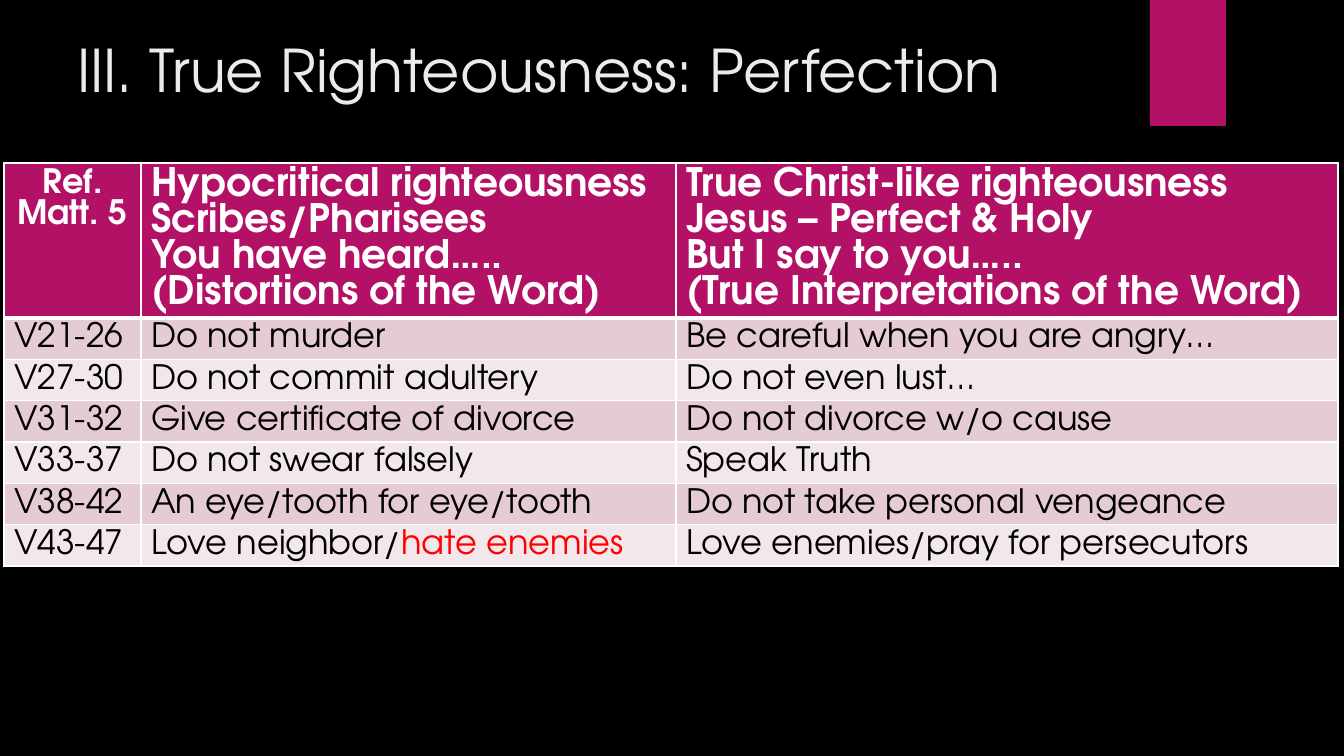
from lxml import etree
from pptx import Presentation
from pptx.dml.color import RGBColor
from pptx.enum.shapes import MSO_SHAPE
from pptx.enum.text import MSO_ANCHOR, PP_ALIGN
from pptx.oxml.ns import qn
from pptx.util import Emu, Pt

RECT = MSO_SHAPE.RECTANGLE
TOP = MSO_ANCHOR.TOP
LEFT, CENTER = PP_ALIGN.LEFT, PP_ALIGN.CENTER

BLACK = RGBColor(0x00, 0x00, 0x00)
WHITE = RGBColor(0xFF, 0xFF, 0xFF)
TITLE_GRAY = RGBColor(0xEB, 0xEB, 0xEB)
MAGENTA = RGBColor(0xB3, 0x11, 0x66)
BANDS = RGBColor(0xE5, 0xCC, 0xD3), RGBColor(0xF2, 0xE7, 0xEA)
RED = RGBColor(0xFF, 0x00, 0x00)

FONT = "TeX Gyre Adventor"
PX = 914400 / 100.8
COLUMNS = 137, 535, 662
HEADER_HEIGHT, ROW_HEIGHT = 155, 41
LINE_PITCH = {24: 22.3, 28: 25.7}

HEADERS = [
    (["Ref.", "Matt. 5"], 24, CENTER),
    (["Hypocritical righteousness", "Scribes/Pharisees",
      "You have heard…..", "(Distortions of the Word)"], 28, LEFT),
    (["True Christ-like righteousness", "Jesus – Perfect & Holy",
      "But I say to you…..", "(True Interpretations of the Word)"], 28, LEFT),
]
VERSES = [
    ("V21-26", "Do not murder", "Be careful when you are angry…"),
    ("V27-30", "Do not commit adultery", "Do not even lust…"),
    ("V31-32", "Give certificate of divorce", "Do not divorce w/o cause"),
    ("V33-37", "Do not swear falsely", "Speak Truth"),
    ("V38-42", "An eye/tooth for eye/tooth", "Do not take personal vengeance"),
    ("V43-47", "Love neighbor/", "Love enemies/pray for persecutors"),
]


def px(n):
    """Turn whole pixels into EMU."""
    return Emu(round(n * PX))


def set_font(font, size, color, bold=False):
    """Format a paragraph font."""
    font.name, font.size, font.bold = FONT, Pt(size), bold
    font.color.rgb = color


def add_title(s, text):
    """Place and fill the title placeholder."""
    sp = s.shapes.title
    sp.left, sp.top, sp.width, sp.height = px(67), px(29), px(1037), px(154)
    tf = sp.text_frame
    tf.text, tf.vertical_anchor, tf.word_wrap = text, TOP, True
    p = tf.paragraphs[0]
    p.alignment = LEFT
    set_font(p.font, 42, TITLE_GRAY)


def add_bar(s, x, y, w, h):
    """Add the magenta accent bar."""
    sp = s.shapes.add_shape(RECT, px(x), px(y), px(w), px(h))
    sp.shadow.inherit = False
    sp.fill.solid()
    sp.fill.fore_color.rgb = MAGENTA
    sp.line.fill.background()


def set_borders(cell, bottom):
    """Draw white borders round a cell, with its own bottom width."""
    tcPr = cell._tc.get_or_add_tcPr()
    for side, width in ("L", 1), ("R", 1), ("T", 1), ("B", bottom):
        ln = etree.SubElement(tcPr, qn(f"a:ln{side}"), w=str(Pt(width)))
        fill = etree.SubElement(ln, qn("a:solidFill"))
        etree.SubElement(fill, qn("a:srgbClr"), val=str(WHITE))


def fill_cell(cell, lines, fill, color, size=24, align=LEFT, bold=False, bottom=1):
    """Write and format one table cell."""
    set_borders(cell, bottom)
    cell.fill.solid()
    cell.fill.fore_color.rgb = fill
    tf = cell.text_frame
    tf.text = "\n".join(lines)
    for p in tf.paragraphs:
        p.alignment, p.line_spacing = align, Pt(LINE_PITCH[size])
        set_font(p.font, size, color, bold)


def add_verse_table(s, x, y):
    """Add the comparison table."""
    height = HEADER_HEIGHT + ROW_HEIGHT * len(VERSES)
    table = s.shapes.add_table(len(VERSES) + 1, len(COLUMNS), px(x), px(y),
                               px(sum(COLUMNS)), px(height)).table
    table.horz_banding = False
    for column, width in zip(table.columns, COLUMNS):
        column.width = px(width)
    for i, row in enumerate(table.rows):
        row.height = px(ROW_HEIGHT if i else HEADER_HEIGHT)
    for j, (lines, size, align) in enumerate(HEADERS):
        fill_cell(table.cell(0, j), lines, MAGENTA, WHITE, size, align, True, 3)
    for i, verse in enumerate(VERSES):
        for j, text in enumerate(verse):
            fill_cell(table.cell(i + 1, j), [text], BANDS[i % 2], BLACK)
    r = table.cell(len(VERSES), 1).text_frame.paragraphs[0].add_run()
    r.text = "hate enemies"
    r.font.color.rgb = RED


def main():
    """Build the slide and save it."""
    prs = Presentation()
    prs.slide_width, prs.slide_height = px(1344), px(756)
    s = prs.slides.add_slide(prs.slide_layouts[5])
    s.background.fill.solid()
    s.background.fill.fore_color.rgb = BLACK
    add_bar(s, 1150, 0, 76, 126)
    add_title(s, "III. True Righteousness: Perfection")
    add_verse_table(s, 4, 163)
    prs.save("out.pptx")


if __name__ == "__main__":
    main()
